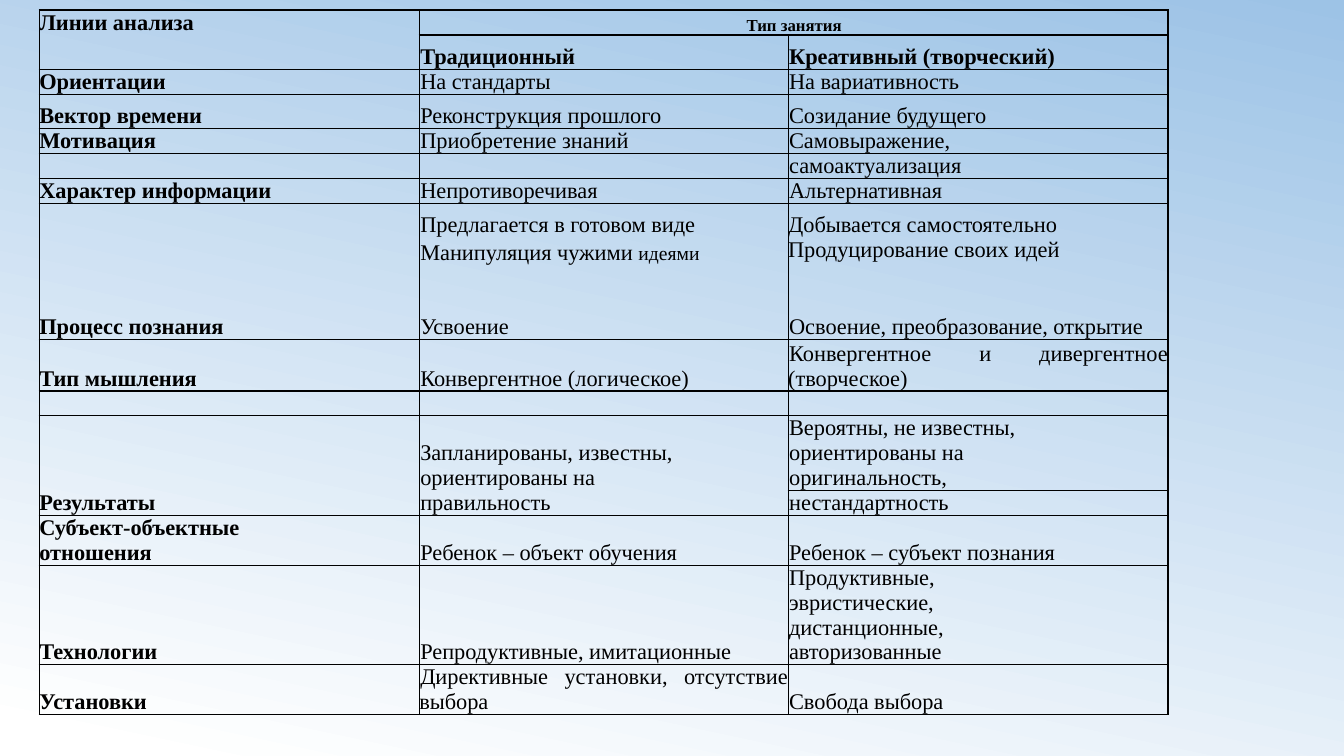
from lxml import etree
from pptx import Presentation
from pptx.dml.color import RGBColor
from pptx.enum.text import MSO_ANCHOR, PP_ALIGN
from pptx.oxml.ns import qn
from pptx.util import Pt

BOTTOM, TOP = MSO_ANCHOR.BOTTOM, MSO_ANCHOR.TOP
JUSTIFY, CENTER = PP_ALIGN.JUSTIFY, PP_ALIGN.CENTER

# Content: one tuple per table row, line breaks separate paragraphs
ROWS = [
    ("Линии анализа", "Тип занятия", ""),
    ("", "Традиционный", "Креативный (творческий)"),
    ("Ориентации", "На стандарты", "На вариативность"),
    ("Вектор времени", "Реконструкция прошлого", "Созидание будущего"),
    ("Мотивация", "Приобретение знаний", "Самовыражение,"),
    ("", "", "самоактуализация"),
    ("Характер информации", "Непротиворечивая", "Альтернативная"),
    ("", "Предлагается в готовом виде", "Добывается самостоятельно"),
    ("", "Манипуляция чужими |идеями", "Продуцирование своих идей"),
    ("Процесс познания", "Усвоение", "Освоение, преобразование, открытие"),
    ("Тип мышления", "Конвергентное (логическое)",
     "Конвергентное и дивергентное (творческое)"),
    ("", "", ""),
    ("Результаты", "Запланированы, известны,\nориентированы на\nправильность",
     "Вероятны, не известны,\nориентированы на\nоригинальность,"),
    ("", "", "нестандартность"),
    ("Субъект-объектные\nотношения", "Ребенок – объект обучения",
     "Ребенок – субъект познания"),
    ("Технологии", "Репродуктивные, имитационные",
     "Продуктивные,\nэвристические,\nдистанционные,\nавторизованные"),
    ("Установки", "Директивные установки, отсутствие выбора", "Свобода выбора"),
]
HEADER_ROWS = 2
OPEN_BELOW = {4, 6, 7, 8, 10, 12}  # rows with no rule under them
FLUSH_CELLS = {(7, 2), (8, 2)}     # cells without the first-line indent

THEME = {
    "font": "Times New Roman", "body": Pt(16), "header": Pt(12), "small": Pt(14),
    "ink": RGBColor(0, 0, 0), "sky": RGBColor(0x9D, 0xC3, 0xE6),
    "white": RGBColor(255, 255, 255), "rule": Pt(1), "indent": Pt(0.72),
}

# Geometry in points
LINE, TALL = 17.7, 24.5
LEFT, TABLE_TOP = 28.1, 7.2
WIDTHS = (271.4, 263.5, 271.4)
SPECIAL_HEIGHTS = {1: TALL, 3: TALL, 7: TALL, 8: 19.9, 9: 53, 10: 36.7}
PLAIN_STYLE = "{2D5ABB26-0587-4C30-8999-92F81FD0307C}"


def row_height(index):
    lines = max(text.count("\n") + 1 for text in ROWS[index])
    if index == len(ROWS) - 1:
        lines = 2  # the wrapped sentence
    return SPECIAL_HEIGHTS.get(index, lines * LINE)


def is_open(row, column):
    return row in OPEN_BELOW or (row, column) == (0, 0)


def draw_borders(cell, row, column):
    sides = ["lnL", "lnR"]
    if not is_open(row - 1, column):
        sides.append("lnT")
    if not is_open(row, column):
        sides.append("lnB")
    properties = cell._tc.get_or_add_tcPr()
    for position, side in enumerate(sides):
        line = etree.Element(qn("a:" + side), w=str(THEME["rule"]))
        fill = etree.SubElement(line, qn("a:solidFill"))
        etree.SubElement(fill, qn("a:srgbClr"), val=str(THEME["ink"]))
        properties.insert(position, line)


def write_cell(cell, row, column, text):
    cell.margin_left = cell.margin_right = cell.margin_top = cell.margin_bottom = 0
    cell.vertical_anchor = TOP if (row, column) == (8, 2) else BOTTOM
    cell.fill.background()
    draw_borders(cell, row, column)
    is_title = (row, column) == (0, 1)
    frame = cell.text_frame
    for number, line in enumerate(text.split("\n")):
        para = frame.add_paragraph() if number else frame.paragraphs[0]
        para.alignment = CENTER if is_title else JUSTIFY
        if column and (row, column) not in FLUSH_CELLS:
            para._p.get_or_add_pPr().set("indent", str(THEME["indent"]))
        font = para.font
        font.name, font.color.rgb = THEME["font"], THEME["ink"]
        font.size = THEME["header"] if is_title else THEME["body"]
        font.bold = column == 0 or row < HEADER_ROWS
        if not line:
            size = str(int(THEME["body"].pt * 100))
            etree.SubElement(para._p, qn("a:endParaRPr"), sz=size)
            continue
        main, *small = line.split("|")
        para.add_run().text = main
        for part in small:
            span = para.add_run()
            span.text = part
            span.font.size = THEME["small"]


deck = Presentation()
deck.slide_width, deck.slide_height = Pt(960), Pt(540)
page = deck.slides.add_slide(deck.slide_layouts[6])

# Background gradient
background = page.background.fill
background.gradient()
background.gradient_angle = 258
first, last = background.gradient_stops
first.color.rgb, first.position = THEME["sky"], 0
last.color.rgb, last.position = THEME["white"], 0.97

# Comparison table
heights = [row_height(index) for index in range(len(ROWS))]
graphic = page.shapes.add_table(len(ROWS), len(WIDTHS), Pt(LEFT), Pt(TABLE_TOP),
                                Pt(sum(WIDTHS)), Pt(sum(heights)))
table = graphic.table
table.first_row = table.horz_banding = False
table._tbl.tblPr.find(qn("a:tableStyleId")).text = PLAIN_STYLE
for column, width in zip(table.columns, WIDTHS):
    column.width = Pt(width)
for row, height in zip(table.rows, heights):
    row.height = Pt(height)
for row_index, texts in enumerate(ROWS):
    for column_index, text in enumerate(texts):
        write_cell(table.cell(row_index, column_index), row_index, column_index, text)

# Merged cells
table.cell(0, 1).merge(table.cell(0, 2))
for column_index in (0, 1):
    table.cell(12, column_index).merge(table.cell(13, column_index))

deck.save("out.pptx")
